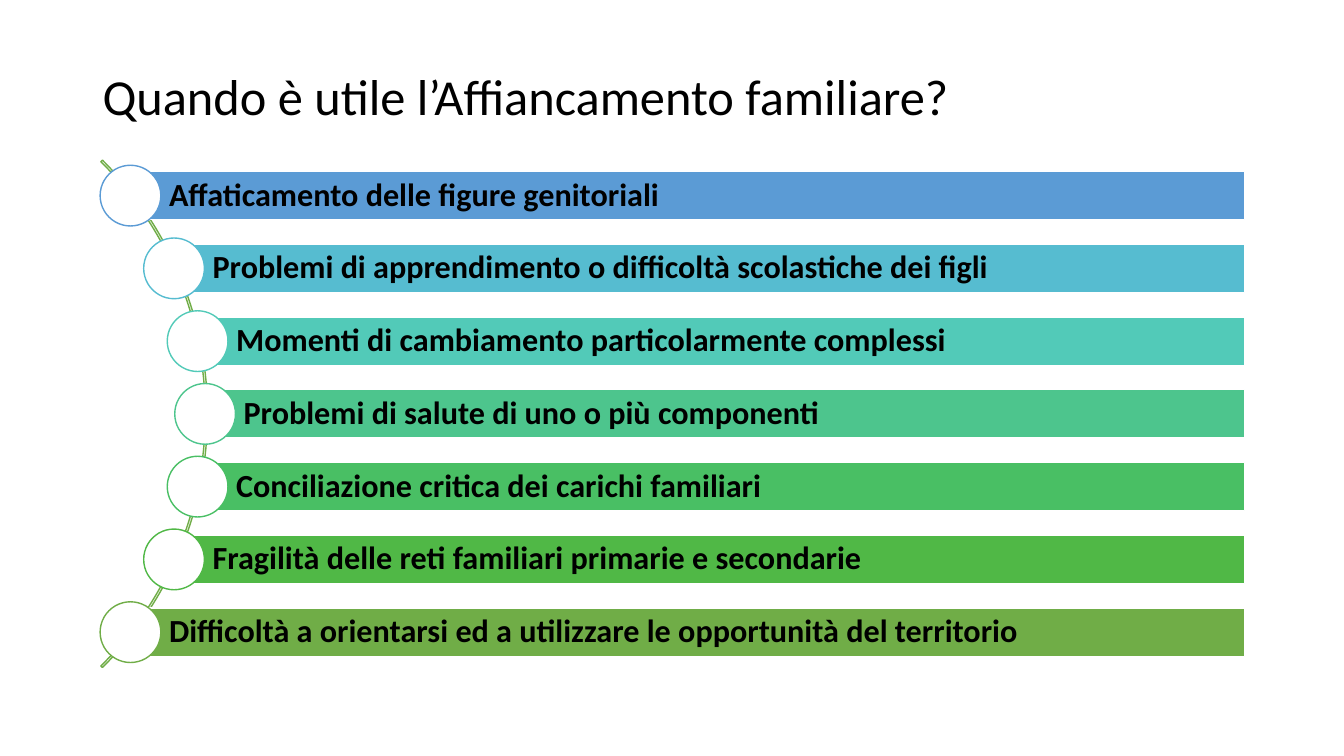
import math
from dataclasses import dataclass

import pptx
import pptx.dml.color
import pptx.enum.shapes
import pptx.enum.text
import pptx.util

Cm, Pt = pptx.util.Cm, pptx.util.Pt
RGB = pptx.dml.color.RGBColor.from_string
SHAPE = pptx.enum.shapes.MSO_SHAPE
ANCHOR = pptx.enum.text.MSO_ANCHOR
ALIGN = pptx.enum.text.PP_ALIGN

TITLE = "Quando è utile l’Affiancamento familiare?"
REASONS = [
    ("Affaticamento delle figure genitoriali", "5B9BD5"),
    ("Problemi di apprendimento o difficoltà scolastiche dei figli", "56BCD0"),
    ("Momenti di cambiamento particolarmente complessi", "52CAB8"),
    ("Problemi di salute di uno o più componenti", "4DC58D"),
    ("Conciliazione critica dei carichi familiari", "49BF64"),
    ("Fragilità delle reti familiari primarie e secondarie", "50B846"),
    ("Difficoltà a orientarsi ed a utilizzare le opportunità del territorio", "70AD47"),
]


@dataclass(frozen=True)
class Theme:
    font: str = "Calibri"
    title_size: int = 36
    bar_size: int = 23
    text: str = "000000"
    paper: str = "FFFFFF"
    arc: str = "70AD47"
    line_width: int = 1


THEME = Theme()

# Lengths in centimetres
ARC_X, ARC_Y, ARC_RADIUS = -3.81, 10.43, 9.04
DOT_RADIUS_ON_ARC = 8.98
DOTS_SPAN = 11.0
BAR_RIGHT, BAR_HEIGHT, DOT_SIZE = 31.36, 1.22, 1.53


def add_shape(slide, kind, left, top, width, height, line, fill=None):
    sp = slide.shapes.add_shape(kind, Cm(left), Cm(top), Cm(width), Cm(height))
    sp.shadow.inherit = False
    if fill:
        sp.fill.solid()
        sp.fill.fore_color.rgb = RGB(fill)
    else:
        sp.fill.background()
    sp.line.color.rgb = RGB(line)
    sp.line.width = Pt(THEME.line_width)
    return sp


def set_text(tf, text, size, bold=False):
    tf.text = text
    tf.word_wrap = True
    tf.auto_size = pptx.enum.text.MSO_AUTO_SIZE.NONE
    tf.vertical_anchor = ANCHOR.MIDDLE
    p = tf.paragraphs[0]
    p.alignment = ALIGN.LEFT
    p.line_spacing = 0.9
    p.font.name = THEME.font
    p.font.size = Pt(size)
    p.font.bold = bold
    p.font.color.rgb = RGB(THEME.text)


def add_title(slide):
    title = slide.shapes.title
    title.left, title.top = Cm(2.33), Cm(1.55)
    title.width, title.height = Cm(29.21), Cm(1.88)
    set_text(title.text_frame, TITLE, THEME.title_size)


def add_arc(slide):
    arc = add_shape(slide, SHAPE.BLOCK_ARC, ARC_X - ARC_RADIUS, ARC_Y - ARC_RADIUS,
                    2 * ARC_RADIUS, 2 * ARC_RADIUS, THEME.arc)
    for i, value in enumerate((189, 27, 0.003)):
        arc.adjustments[i] = value


def add_reason(slide, text, color, offset):
    """Draw a bar and its dot; offset is the height below the arc's centre."""
    x = ARC_X + math.sqrt(DOT_RADIUS_ON_ARC ** 2 - offset ** 2)
    y = ARC_Y + offset
    bar = add_shape(slide, SHAPE.RECTANGLE, x, y - BAR_HEIGHT / 2,
                    BAR_RIGHT - x, BAR_HEIGHT, THEME.paper, color)
    tf = bar.text_frame
    set_text(tf, text, THEME.bar_size, bold=True)
    tf.margin_left = Cm(0.97)
    tf.margin_top = tf.margin_right = tf.margin_bottom = Cm(0.15)
    add_shape(slide, SHAPE.OVAL, x - DOT_SIZE / 2, y - DOT_SIZE / 2,
              DOT_SIZE, DOT_SIZE, color, THEME.paper)


def main():
    prs = pptx.Presentation()
    prs.slide_width, prs.slide_height = Cm(33.87), Cm(19.05)
    slide = prs.slides.add_slide(prs.slide_layouts.get_by_name("Title Only"))
    add_title(slide)
    add_arc(slide)
    step = DOTS_SPAN / (len(REASONS) - 1)
    for i, (text, color) in enumerate(REASONS):
        add_reason(slide, text, color, i * step - DOTS_SPAN / 2)
    prs.save("out.pptx")


if __name__ == "__main__":
    main()
